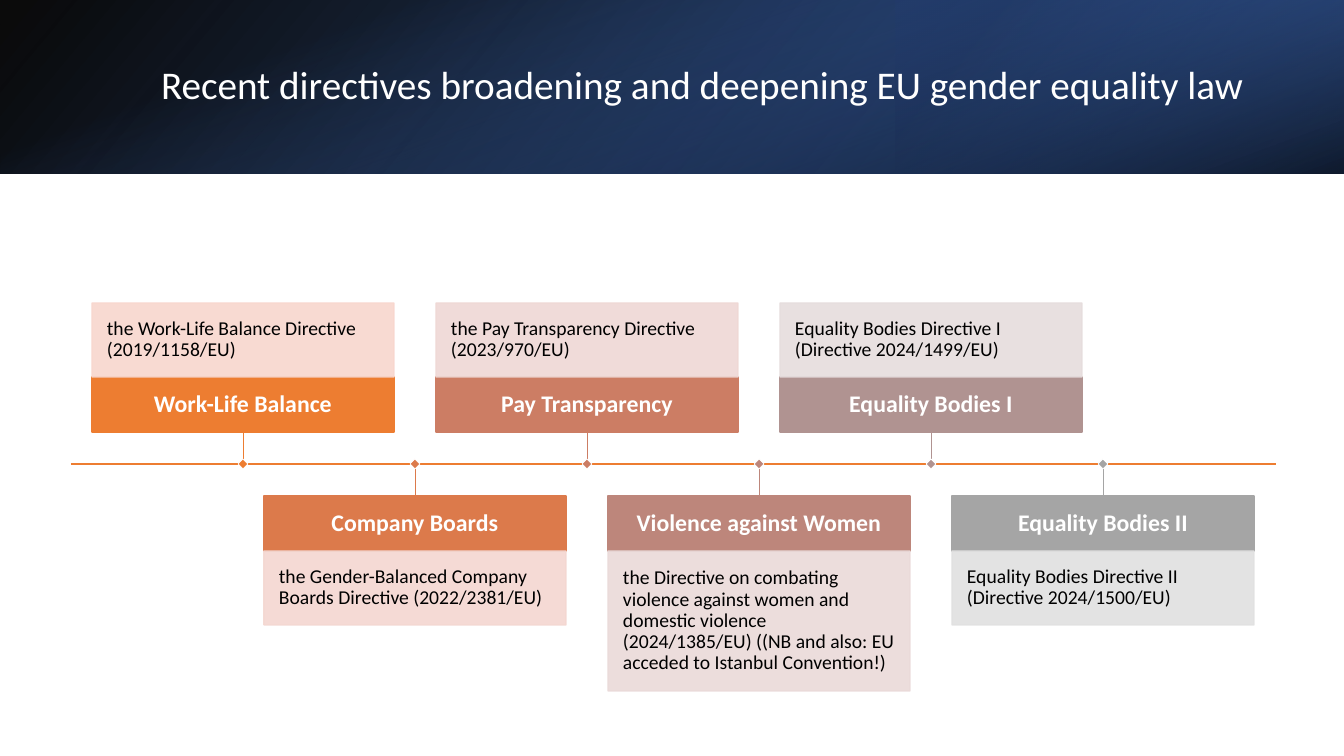
from dataclasses import dataclass

from lxml import etree
from pptx import Presentation
from pptx.dml.color import RGBColor
from pptx.enum import shapes, text
from pptx.oxml.ns import qn

PX = 12192000 / 1344
RECT = shapes.MSO_SHAPE.RECTANGLE


@dataclass(frozen=True)
class Theme:
    font: str = "Calibri"
    title: int = 28
    head: int = 17
    body: int = 14
    white: str = "FFFFFF"
    black: str = "000000"
    navy: str = "203864"
    deep: str = "2F5597"
    blue: str = "4472C4"
    axis: str = "ED7D31"
    thin: float = 0.5
    line: float = 1


T = Theme()

CARDS = [
    ("Work-Life Balance", "the Work-Life Balance Directive (2019/1158/EU)",
     "ED7D31", "F8D7CE", 74),
    ("Company Boards", "the Gender-Balanced Company Boards Directive (2022/2381/EU)",
     "DC7A4B", "F4D7D1", 74),
    ("Pay Transparency", "the Pay Transparency Directive (2023/970/EU)",
     "CC7D64", "EFD8D5", 74),
    ("Violence against Women",
     "the Directive on combating violence against women and domestic violence "
     "(2024/1385/EU) ((NB and also: EU acceded to Istanbul Convention!)",
     "BD867B", "EADAD9", 140),
    ("Equality Bodies I", "Equality Bodies Directive I (Directive 2024/1499/EU)",
     "B09391", "E6DDDD", 74),
    ("Equality Bodies II", "Equality Bodies Directive II (Directive 2024/1500/EU)",
     "A5A5A5", "E1E1E1", 74),
]


def emu(*sizes):
    return [round(size * PX) for size in sizes]


def points(size):
    return round(size * 12700)


def rgb(code):
    return RGBColor.from_string(code)


def apply(item, values):
    for name, value in values.items():
        setattr(item, name, value)


def fade(shape, *levels):
    colors = shape.element.spPr.iter(qn("a:srgbClr"))
    for color, level in zip(list(colors), levels):
        etree.SubElement(color, qn("a:alpha")).set("val", str(level * 1000))


def add_box(slide, box, fill, edge, width):
    shape = slide.shapes.add_shape(RECT, *emu(*box))
    shape.shadow.inherit = False
    shape.fill.solid()
    shape.fill.fore_color.rgb = rgb(fill)
    shape.line.color.rgb = rgb(edge)
    shape.line.width = points(width)
    return shape


def add_blend(slide, box, stops, angle, turn, flip):
    shape = slide.shapes.add_shape(RECT, *emu(*box))
    shape.shadow.inherit = False
    shape.line.fill.background()
    shape.rotation = turn
    if flip:
        shape.element.spPr.xfrm.set("flipH", "1")
    shape.fill.gradient()
    shape.fill.gradient_angle = 360 - angle
    for stop, (place, color, level) in zip(shape.fill.gradient_stops, stops):
        stop.position = place / 100
        stop.color.rgb = rgb(color)
    fade(shape, *[level for place, color, level in stops])


def add_line(slide, ends, color, width):
    line = slide.shapes.add_connector(shapes.MSO_CONNECTOR.STRAIGHT, *emu(*ends))
    line.line.color.rgb = rgb(color)
    line.line.width = points(width)
    etree.SubElement(line.element.spPr, qn("a:effectLst"))


def write(shape, words, size, color, pad, align=text.PP_ALIGN.LEFT, bold=False):
    frame = shape.text_frame
    sides = {f"margin_{side}": emu(pad)[0] for side in ("left", "top", "right", "bottom")}
    apply(frame, {"word_wrap": True, "vertical_anchor": text.MSO_ANCHOR.MIDDLE, **sides})
    part = frame.paragraphs[0]
    apply(part, {"alignment": align, "line_spacing": 0.9})
    run = part.add_run()
    run.text = words
    apply(run.font, {"name": T.font, "size": points(size), "bold": bold})
    run.font.color.rgb = rgb(color)


def draw_banner(slide, x, y, w, h):
    third = w // 3
    add_blend(slide, (x, y, w, h),
              [(0, T.black, 96), (100, T.deep, 100)], 140, 0, True)
    add_blend(slide, (x + w - third, y, third, h),
              [(19, T.navy, 68), (100, T.blue, 79)], 320, 180, True)
    shift = (w - h) // 2
    add_blend(slide, (x + shift, y - shift, h, w),
              [(23, T.blue, 0), (99, T.black, 74)], 340, 90, False)
    title = slide.shapes.add_textbox(*emu(x + 151, y + 38, w - 237, 97))
    write(title, "Recent directives broadening and deepening EU gender equality law",
          T.title, T.white, 10)


def draw_card(slide, x, axis, w, card, above):
    name, words, dark, pale, tall = card
    high, gap = 55, 32
    if above:
        edge = axis - gap
        top = edge - high
        base = top - tall
    else:
        edge = top = axis + gap
        base = top + high
    head = add_box(slide, (x, top, w, high), dark, dark, T.line)
    write(head, name, T.head, T.white, 9, text.PP_ALIGN.CENTER, True)
    body = add_box(slide, (x, base, w, tall), pale, pale, T.line)
    fade(body, 90, 90)
    write(body, words, T.body, T.black, 15)
    mid = x + w / 2
    add_line(slide, (mid, edge, mid, axis), dark, T.thin)
    size = 7
    mark = add_box(slide, (mid - size / 2, axis - size / 2, size, size),
                   dark, T.white, T.thin)
    mark.rotation = 45


def draw_times(slide, x, axis, w):
    add_line(slide, (x, axis, x + w, axis), T.axis, T.line)
    inset, wide, step = 21, 302, 172
    for spot, card in enumerate(CARDS):
        draw_card(slide, x + inset + spot * step, axis, wide, card, spot % 2 == 0)


def main():
    deck = Presentation()
    deck.slide_width, deck.slide_height = emu(1344, 756)
    slide = deck.slides.add_slide(deck.slide_layouts[6])
    draw_banner(slide, 0, 0, 1344, 174)
    draw_times(slide, 71, 464, 1205)
    deck.save("out.pptx")


if __name__ == "__main__":
    main()
